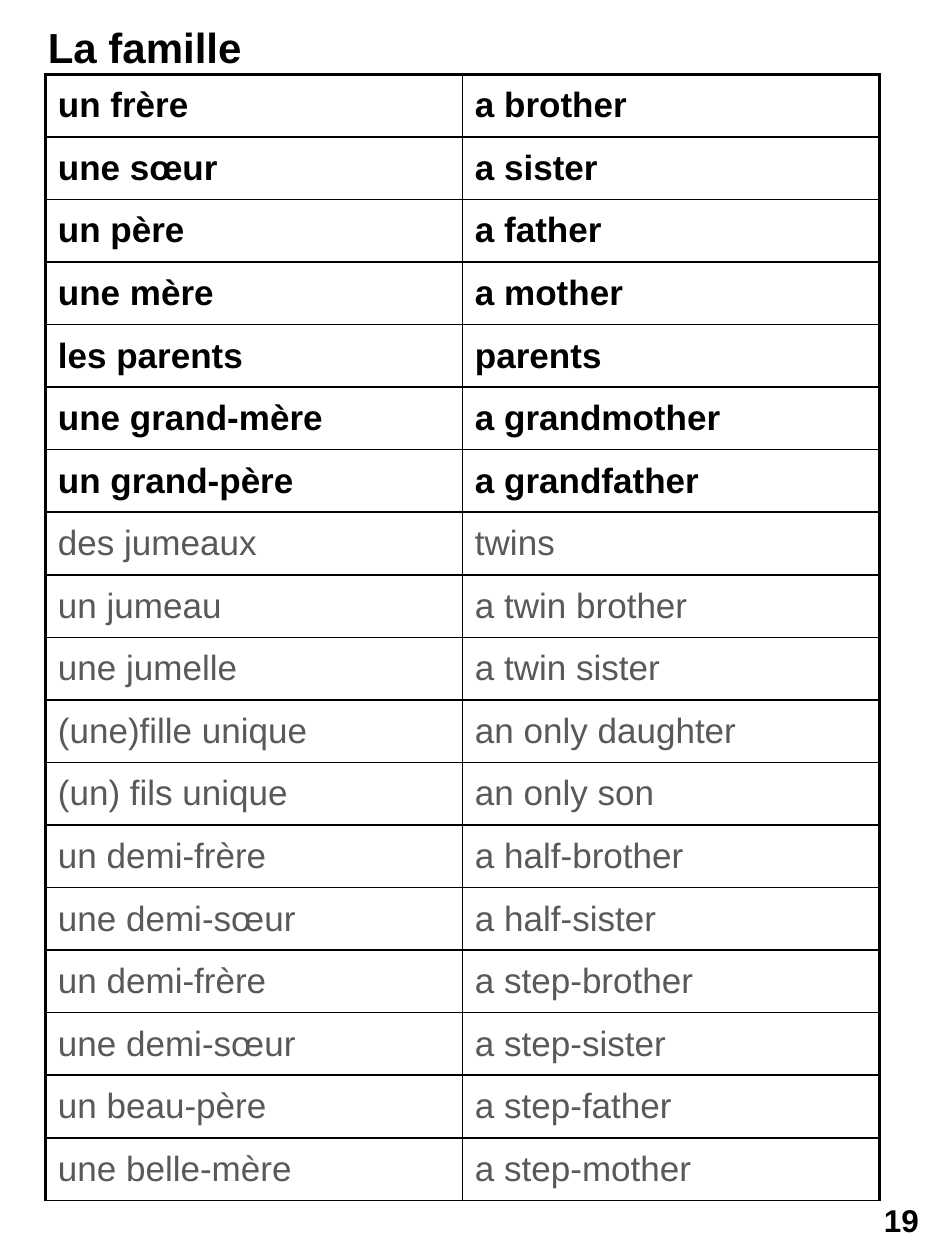
from pptx import Presentation
from pptx import util as u
from pptx.dml.color import RGBColor
from pptx.enum import shapes, text
from pptx.oxml import parse_xml
from pptx.oxml.ns import nsdecls

TITLE = "La famille"
PAGE_NUMBER = "19"
CORE_WORDS = [
    ("un frère", "a brother"),
    ("une sœur", "a sister"),
    ("un père", "a father"),
    ("une mère", "a mother"),
    ("les parents", "parents"),
    ("une grand-mère", "a grandmother"),
    ("un grand-père", "a grandfather"),
]
EXTRA_WORDS = [
    ("des jumeaux", "twins"),
    ("un jumeau", "a twin brother"),
    ("une jumelle", "a twin sister"),
    ("(une)fille unique", "an only daughter"),
    ("(un) fils unique", "an only son"),
    ("un demi-frère", "a half-brother"),
    ("une demi-sœur", "a half-sister"),
    ("un demi-frère", "a step-brother"),
    ("une demi-sœur", "a step-sister"),
    ("un beau-père", "a step-father"),
    ("une belle-mère", "a step-mother"),
]
THEME = {
    "font": "Arial", "black": "000000", "grey": "595959",
    "title": 24, "word": 20, "number": 18, "thin": 1, "thick": 2.25,
}


def write(frame, content, size, color=THEME["black"], bold=True,
          align=text.PP_ALIGN.LEFT, before=0):
    para = frame.paragraphs[0]
    para.alignment = align
    para.space_before = u.Pt(before)
    span = para.add_run()
    span.text = content
    span.font.name = THEME["font"]
    span.font.size = u.Pt(size)
    span.font.bold = bold
    span.font.color.rgb = RGBColor.from_string(color)


def set_borders(cell, widths):
    properties = cell._tc.get_or_add_tcPr()
    for index, (side, width) in enumerate(widths.items()):
        properties.insert(index, parse_xml(
            f'<a:ln{side} {nsdecls("a")} w="{u.Pt(width)}"><a:solidFill>'
            f'<a:srgbClr val="{THEME["black"]}"/></a:solidFill></a:ln{side}>'))


def place(box, left, top, width, height):
    box.left, box.top = u.Inches(left), u.Inches(top)
    box.width, box.height = u.Inches(width), u.Inches(height)


def add_vocabulary(page):
    words = CORE_WORDS + EXTRA_WORDS
    holder = page.shapes.add_table(
        len(words), 2, u.Inches(0.36), u.Inches(0.59), u.Inches(6.62), u.Inches(8.94))
    table = holder.table
    table.first_row = table.horz_banding = False
    thin, thick = THEME["thin"], THEME["thick"]
    for row, pair in enumerate(words):
        core = row < len(CORE_WORDS)
        for column, word in enumerate(pair):
            cell = table.cell(row, column)
            cell.fill.background()
            cell.vertical_anchor = text.MSO_ANCHOR.MIDDLE
            set_borders(cell, {
                "L": thin if column else thick,
                "R": thick if column else thin,
                "T": thin if row else thick,
                "B": thin,
            })
            write(cell.text_frame, word, THEME["word"], bold=core, before=4,
                  color=THEME["black" if core else "grey"])


def add_title(page):
    title = page.shapes.title
    place(title, 0.28, 0.12, 1.75, 0.5)
    frame = title.text_frame
    frame.word_wrap = False
    frame.auto_size = text.MSO_AUTO_SIZE.SHAPE_TO_FIT_TEXT
    frame.vertical_anchor = text.MSO_ANCHOR.MIDDLE
    write(frame, TITLE, THEME["title"])


def add_page_number(page):
    box = page.shapes.add_shape(
        shapes.MSO_SHAPE.ROUNDED_RECTANGLE,
        u.Inches(6.88), u.Inches(9.45), u.Inches(0.55), u.Inches(0.47))
    box.shadow.inherit = False
    box.fill.background()
    box.line.fill.background()
    box.text_frame.vertical_anchor = text.MSO_ANCHOR.MIDDLE
    write(box.text_frame, PAGE_NUMBER, THEME["number"], align=text.PP_ALIGN.CENTER)


def main():
    deck = Presentation()
    deck.slide_width, deck.slide_height = u.Inches(7.5), u.Inches(10)
    page = deck.slides.add_slide(deck.slide_layouts[5])
    add_title(page)
    add_vocabulary(page)
    add_page_number(page)
    deck.save("out.pptx")


if __name__ == "__main__":
    main()
